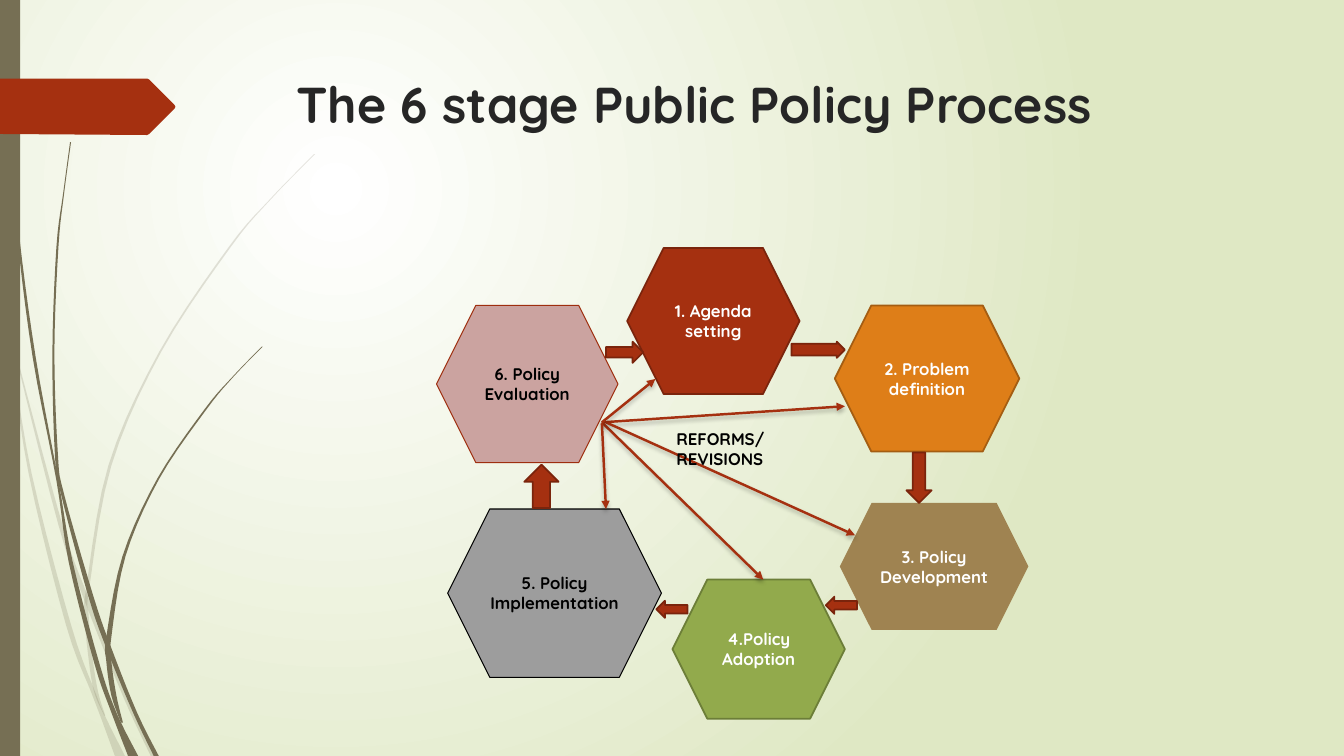
from lxml import etree
from pptx import Presentation
from pptx.dml.color import RGBColor
from pptx.enum.shapes import MSO_CONNECTOR, MSO_SHAPE
from pptx.enum.text import MSO_ANCHOR, PP_ALIGN
from pptx.oxml import parse_xml
from pptx.oxml.ns import qn
from pptx.util import Inches, Pt

HEXAGON = MSO_SHAPE.HEXAGON
UP, DOWN = MSO_SHAPE.UP_ARROW, MSO_SHAPE.DOWN_ARROW
LEFT, RIGHT = MSO_SHAPE.LEFT_ARROW, MSO_SHAPE.RIGHT_ARROW
CENTER, MIDDLE, TOP = PP_ALIGN.CENTER, MSO_ANCHOR.MIDDLE, MSO_ANCHOR.TOP
STRAIGHT = MSO_CONNECTOR.STRAIGHT

WHITE = RGBColor(0xFF, 0xFF, 0xFF)
BLACK = RGBColor(0, 0, 0)
CHARCOAL = RGBColor(0x26, 0x26, 0x26)
PALE_GREEN = RGBColor(0xDF, 0xE8, 0xC4)
OLIVE = RGBColor(0x76, 0x6F, 0x54)
RUST = RGBColor(0xA5, 0x30, 0x10)
DARK_RUST = RGBColor(0x7A, 0x24, 0x0C)
MID_RUST = RGBColor(0x9E, 0x2E, 0x0F)
ORANGE = RGBColor(0xDE, 0x7E, 0x18)
DARK_ORANGE = RGBColor(0xA4, 0x5D, 0x12)
BROWN = RGBColor(0x9F, 0x83, 0x51)
GREEN = RGBColor(0x92, 0xAA, 0x4C)
DARK_GREEN = RGBColor(0x6C, 0x7E, 0x38)
GRAY = RGBColor(0x9D, 0x9D, 0x9D)
PINK = RGBColor(0xCB, 0xA3, 0xA0)

NS = 'xmlns:a="http://schemas.openxmlformats.org/drawingml/2006/main"'
RADIAL = (f'<a:path {NS} path="circle"><a:fillToRect l="50000" t="50000" '
          'r="100000" b="100000"/></a:path>')
SHADOW = (f'<a:effectLst {NS}><a:outerShdw blurRad="38100" dist="25400" dir="5400000" '
          'rotWithShape="0"><a:srgbClr val="000000"><a:alpha val="25000"/></a:srgbClr>'
          '</a:outerShdw></a:effectLst>')

prs = Presentation()
prs.slide_width, prs.slide_height = Inches(13.33), Inches(7.5)
s = prs.slides.add_slide(prs.slide_layouts[6])


def write(sp, text, size=12, color=BLACK, align=None, anchor=TOP):
    tf = sp.text_frame
    tf.word_wrap = True
    tf.vertical_anchor = anchor
    p = tf.paragraphs[0]
    p.alignment = align
    r = p.add_run()
    r.text = text
    r.font.name, r.font.size, r.font.bold = "Quicksand", Pt(size), True
    r.font.color.rgb = color


def paint(sp, fill, line=None, width=1.25):
    sp.shadow.inherit = False
    sp.fill.solid()
    sp.fill.fore_color.rgb = fill
    if line is None:
        sp.line.fill.background()
    else:
        sp.line.color.rgb = line
        sp.line.width = Pt(width)


bg = s.background.fill
bg.gradient()
for stop, color in zip(bg.gradient_stops, (WHITE, PALE_GREEN)):
    stop.color.rgb = color
grad = s.element.find(".//" + qn("a:gradFill"))
grad.remove(grad.find(qn("a:lin")))
grad.append(parse_xml(RADIAL))

# Each blade lists centre x, y and width from tip to root.
blades = [
    (20, [(0, 2.9, .01), (.11, 3.5, .01), (.3, 4.7, .03), (.68, 6.2, .05),
          (.93, 6.88, .04), (1.03, 7.13, .05), (1.19, 7.5, .1)]),
    (20, [(.14, 3.45, .01), (.6, 5.21, .04), (.86, 5.95, .05), (1.25, 6.93, .04),
          (1.52, 7.5, .05)]),
    (20, [(3.12, 1.53, .01), (2.68, 1.98, .01), (2.28, 2.45, .02), (1.59, 3.49, .02),
          (1.09, 4.62, .03), (.87, 5.84, .03), (.86, 6.1, .04), (.89, 6.46, .04),
          (.95, 6.85, .04), (1.04, 7.1, .01)]),
    (100, [(.04, 0, .01), (.08, 1.1, .01), (.18, 2.33, .02), (.34, 3.55, .03),
           (.57, 4.77, .02), (.7, 5.57, .04), (.96, 6.58, .05), (1.13, 7.07, .05),
           (1.32, 7.5, .1)]),
    (100, [(.7, 1.41, .01), (.63, 1.93, .01), (.57, 2.45, .02), (.53, 3.49, .02),
           (.56, 4.51, .03), (.62, 4.9, .03), (.9, 5.91, .05), (1.08, 6.43, .05),
           (1.34, 7.07, .04), (1.55, 7.5, .05)]),
    (100, [(2.6, 3.44, .01), (2.31, 3.74, .01), (2.04, 4.06, .02), (1.57, 4.75, .02),
           (1.23, 5.52, .03), (1.08, 6.32, .05), (1.08, 6.56, .05), (1.13, 6.9, .05),
           (1.21, 7.17, .02)]),
]
for opacity, knots in blades:
    ends = [knots[0]] + knots + [knots[-1]]
    curve = []
    for a, b, c, d in zip(ends, ends[1:], ends[2:], ends[3:]):
        for t in (0, .2, .4, .6, .8):
            curve.append([b[i] + t / 2 * (c[i] - a[i]
                          + t * (2 * a[i] - 5 * b[i] + 4 * c[i] - d[i])
                          + t * t * (3 * b[i] - a[i] - 3 * c[i] + d[i])) for i in range(3)])
    curve.append(knots[-1])
    edge = [(Inches(x - w / 2), Inches(y)) for x, y, w in curve]
    edge += [(Inches(x + w / 2), Inches(y)) for x, y, w in reversed(curve)]
    fb = s.shapes.build_freeform(*edge[0])
    fb.add_line_segments(edge[1:])
    sp = fb.convert_to_shape()
    paint(sp, OLIVE)
    if opacity < 100:
        clr = sp.fill._xPr.find(".//" + qn("a:srgbClr"))
        etree.SubElement(clr, qn("a:alpha")).set("val", str(opacity * 1000))

bar = s.shapes.add_shape(MSO_SHAPE.RECTANGLE, 0, 0, Inches(.2), Inches(7.5))
paint(bar, OLIVE)

fb = s.shapes.build_freeform(0, Inches(.78))
fb.add_line_segments([(Inches(x), Inches(y)) for x, y in (
    (1.46, .78), (1.48, .79), (1.73, 1.04), (1.74, 1.06), (1.73, 1.08),
    (1.48, 1.33), (1.46, 1.34), (0, 1.33))])
paint(fb.convert_to_shape(), RUST)

title = s.shapes.add_textbox(Inches(2.84), Inches(.68), Inches(9.75), Inches(1.4))
write(title, "The 6 stage Public Policy Process", size=36, color=CHARCOAL)

stages = [
    ("1. Agenda setting", 6.22, 2.46, 1.71, 1.45, RUST, DARK_RUST, 1.25, WHITE),
    ("4.Policy Adoption", 6.67, 5.75, 1.71, 1.38, GREEN, DARK_GREEN, 1.25, WHITE),
    ("2. Problem definition", 8.28, 3.03, 1.83, 1.45, ORANGE, DARK_ORANGE, 1.25, WHITE),
    ("6. Policy Evaluation", 4.33, 3.03, 1.8, 1.56, PINK, MID_RUST, .75, BLACK),
    ("5. Policy Implementation", 4.44, 5.05, 2.12, 1.67, GRAY, BLACK, .75, BLACK),
    ("3. Policy Development", 8.33, 4.99, 1.87, 1.26, BROWN, None, 0, WHITE),
]
for text, x, y, w, h, fill, line, width, color in stages:
    sp = s.shapes.add_shape(HEXAGON, Inches(x), Inches(y), Inches(w), Inches(h))
    paint(sp, fill, line, width)
    write(sp, text, color=color, align=CENTER, anchor=MIDDLE)

block_arrows = [
    (UP, 5.2, 4.61, .34, .43, .5), (RIGHT, 6.01, 3.39, .37, .21, .5),
    (RIGHT, 7.85, 3.39, .53, .16, .73), (DOWN, 8.99, 4.49, .25, .5, .5),
    (LEFT, 8.19, 5.92, .31, .17, .5), (LEFT, 6.51, 5.96, .31, .17, .5),
]
for kind, x, y, w, h, shaft in block_arrows:
    sp = s.shapes.add_shape(kind, Inches(x), Inches(y), Inches(w), Inches(h))
    sp.adjustments[0] = shaft
    paint(sp, RUST, DARK_RUST)

revisions = [(5.97, 4.19, 8.38, 4.03), (5.97, 4.19, 7.57, 5.75), (6.01, 4.19, 8.48, 5.31),
             (5.97, 4.19, 6.5, 3.76), (5.97, 4.2, 6.01, 5.05)]
for ends in revisions:
    cn = s.shapes.add_connector(STRAIGHT, *[Inches(v) for v in ends])
    cn.line.color.rgb = RUST
    cn.line.width = Pt(1.75)
    ln = cn.line._get_or_add_ln()
    etree.SubElement(ln, qn("a:tailEnd")).set("type", "triangle")
    ln.getparent().append(parse_xml(SHADOW))

label = s.shapes.add_textbox(Inches(6.61), Inches(4.2), Inches(1.87), Inches(.3))
write(label, "REFORMS/REVISIONS")

prs.save("out.pptx")
